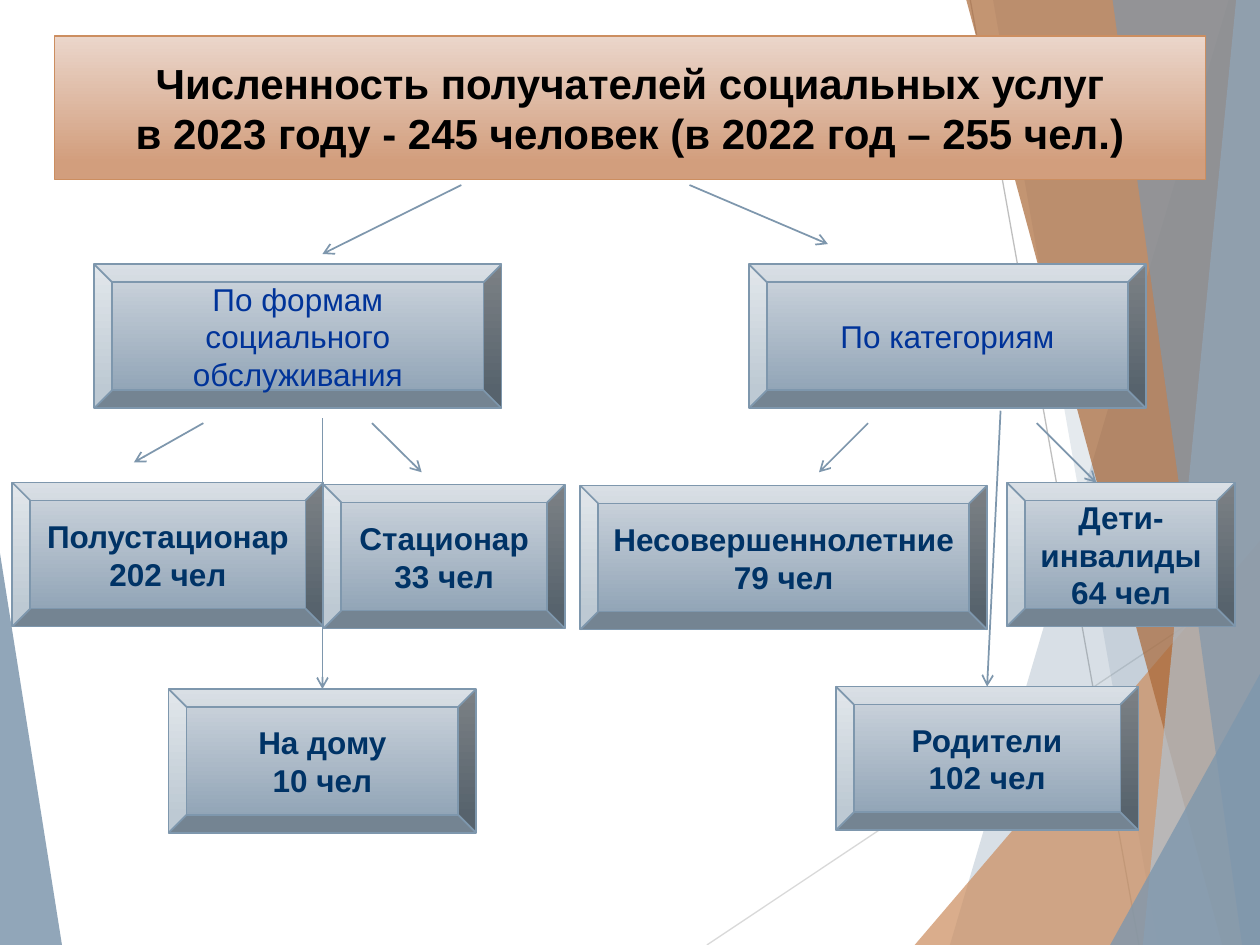
"""Build the slide on recipients of social services as a tree of bevelled boxes."""
from dataclasses import dataclass

from lxml.etree import SubElement
from pptx import Presentation
from pptx.dml.color import RGBColor
from pptx.enum.shapes import MSO_CONNECTOR, MSO_SHAPE
from pptx.enum.text import MSO_ANCHOR, MSO_AUTO_SIZE, PP_ALIGN
from pptx.oxml.ns import qn
from pptx.util import Cm, Pt

WIDTH, HEIGHT, BOX_HEIGHT = 25.4, 19.05, 2.9


@dataclass(frozen=True)
class Theme:
    font: str = "Arial"
    title_size: int = 24
    text_size: int = 18
    title_text: str = "000000"
    group_text: str = "003399"
    leaf_text: str = "003366"
    blue: str = "7E97AD"
    pale_blue: str = "B2C1CE"
    orange: str = "CC8E60"
    brown: str = "AA6837"
    orange_blend: tuple = ("EBD6CB", "D29E7D")
    blue_blend: tuple = ("D0D7DF", "92A5B7")
    ray: str = "D9D9D9"
    dark_ray: str = "BFBFBF"


THEME = Theme()

LEFT_WEDGE = [(0, 11.15), (1.25, HEIGHT), (0, HEIGHT)]
RAYS = [
    ((14.25, HEIGHT), (WIDTH, 11.61), THEME.ray),
    ((19.56, 0), (22.96, HEIGHT), THEME.dark_ray),
]


def right_band(top, bottom):
    """Return the outline from a slanted edge to the right side of the page."""
    return [(top, 0), (bottom, HEIGHT), (WIDTH, HEIGHT), (WIDTH, 0)]


def corner_wedge(left, top):
    """Return the outline of a triangle in the bottom right corner."""
    return [(left, HEIGHT), (WIDTH, top), (WIDTH, HEIGHT)]


FACETS = [
    (right_band(24.77, 19.15), THEME.blue, 30),
    (right_band(20.02, 23.34), THEME.blue, 20),
    (corner_wedge(18.44, 10.9), THEME.orange, 72),
    (right_band(19.48, 24.64), THEME.brown, 70),
    (right_band(24.92, 23.04), THEME.pale_blue, 70),
    (right_band(22.43, 25.04), THEME.blue, 65),
    (corner_wedge(22.38, 13.59), THEME.blue, 80),
]
TITLE = [
    "Численность получателей социальных услуг",
    "в 2023 году - 245 человек (в 2022 год – 255 чел.)",
]
GROUPS = [
    (1.9, 5.33, 8.21, ["По формам социального обслуживания"]),
    (15.1, 5.33, 8, ["По категориям"]),
]
LEAVES = [
    (0.25, 9.73, 6.27, ["Полустационар", "202 чел"]),
    (6.52, 9.77, 4.87, ["Стационар", "33 чел"]),
    (3.4, 13.89, 6.2, ["На дому", "10 чел"]),
    (20.3, 9.73, 4.6, ["Дети-инвалиды", "64 чел"]),
    (11.7, 9.79, 8.2, ["Несовершеннолетние", "79 чел"]),
    (16.85, 13.84, 6.1, ["Родители", "102 чел"]),
]
ARROWS = [
    ((13.9, 3.73), (16.69, 4.92)),
    ((9.3, 3.73), (6.5, 5.12)),
    ((4.1, 8.53), (2.7, 9.32)),
    ((7.5, 8.53), (8.5, 9.52)),
    ((6.5, 8.43), (6.5, 13.89)),
    ((20.17, 8.28), (19.9, 13.84)),
    ((17.5, 8.53), (16.51, 9.52)),
    ((20.9, 8.53), (22.1, 9.73)),
]


def add_facet(page, points, color, opacity):
    """Draw one translucent polygon of the background."""
    corners = [(Cm(x), Cm(y)) for x, y in points]
    builder = page.shapes.build_freeform(*corners[0], scale=1.0)
    builder.add_line_segments(corners[1:], close=True)
    facet = builder.convert_to_shape()
    facet.shadow.inherit = False
    facet.fill.solid()
    facet.fill.fore_color.rgb = RGBColor.from_string(color)
    facet.line.fill.background()
    tint = facet.fill._xPr.find(qn("a:solidFill"))[0]
    SubElement(tint, qn("a:alpha"), val=str(opacity * 1000))


def add_line(page, start, end, color, width, arrow=False):
    """Draw a straight line, with an open arrowhead at its end if asked."""
    ends = [Cm(value) for value in (*start, *end)]
    line = page.shapes.add_connector(MSO_CONNECTOR.STRAIGHT, *ends)
    line.line.color.rgb = RGBColor.from_string(color)
    line.line.width = Pt(width)
    if arrow:
        SubElement(line.line._get_or_add_ln(), qn("a:tailEnd"), type="arrow")
    SubElement(line._element.spPr, qn("a:effectLst"))


def style_box(box, blend, border):
    """Give a box its vertical gradient and its border."""
    box.fill.gradient()
    box.fill.gradient_angle = 270
    for stop, color, position in zip(box.fill.gradient_stops, blend, (0, 0.88)):
        stop.color.rgb = RGBColor.from_string(color)
        stop.position = position
    box.line.color.rgb = RGBColor.from_string(border)
    box.line.width = Pt(1)
    box.shadow.inherit = False


def write_text(box, lines, size, color, bold):
    """Write centred paragraphs into a box."""
    frame = box.text_frame
    frame.word_wrap = True
    frame.auto_size = MSO_AUTO_SIZE.NONE
    frame.vertical_anchor = MSO_ANCHOR.MIDDLE
    frame.text = "\n".join(lines)
    for para in frame.paragraphs:
        para.alignment = PP_ALIGN.CENTER
        para.font.name = THEME.font
        para.font.size = Pt(size)
        para.font.bold = bold
        para.font.color.rgb = RGBColor.from_string(color)


def add_box(page, left, top, width, lines, color, bold):
    """Add one blue bevelled box with its text."""
    box = page.shapes.add_shape(
        MSO_SHAPE.BEVEL, Cm(left), Cm(top), Cm(width), Cm(BOX_HEIGHT))
    style_box(box, THEME.blue_blend, THEME.blue)
    write_text(box, lines, THEME.text_size, color, bold)


def place_title(page):
    """Turn the title placeholder into a bevelled banner above the background."""
    title = page.shapes.title
    title.left, title.top = Cm(1.1), Cm(0.72)
    title.width, title.height = Cm(23.2), Cm(BOX_HEIGHT)
    geometry = SubElement(title._element.spPr, qn("a:prstGeom"), prst="bevel")
    SubElement(geometry, qn("a:avLst"))
    style_box(title, THEME.orange_blend, THEME.orange)
    write_text(title, TITLE, THEME.title_size, THEME.title_text, True)
    page.shapes._spTree.append(title._element)


def add_background(page):
    """Draw the facets and thin rays behind the content."""
    add_facet(page, LEFT_WEDGE, THEME.blue, 85)
    for start, end, color in RAYS:
        add_line(page, start, end, color, 0.75)
    for points, color, opacity in FACETS:
        add_facet(page, points, color, opacity)


def main():
    """Build the slide and save the deck."""
    deck = Presentation()
    deck.slide_width, deck.slide_height = Cm(WIDTH), Cm(HEIGHT)
    page = deck.slides.add_slide(deck.slide_layouts.get_by_name("Title Only"))
    add_background(page)
    place_title(page)
    for group in GROUPS:
        add_box(page, *group, THEME.group_text, False)
    for leaf in LEAVES:
        add_box(page, *leaf, THEME.leaf_text, True)
    for start, end in ARROWS:
        add_line(page, start, end, THEME.blue, 1, arrow=True)
    deck.save("out.pptx")


if __name__ == "__main__":
    main()
